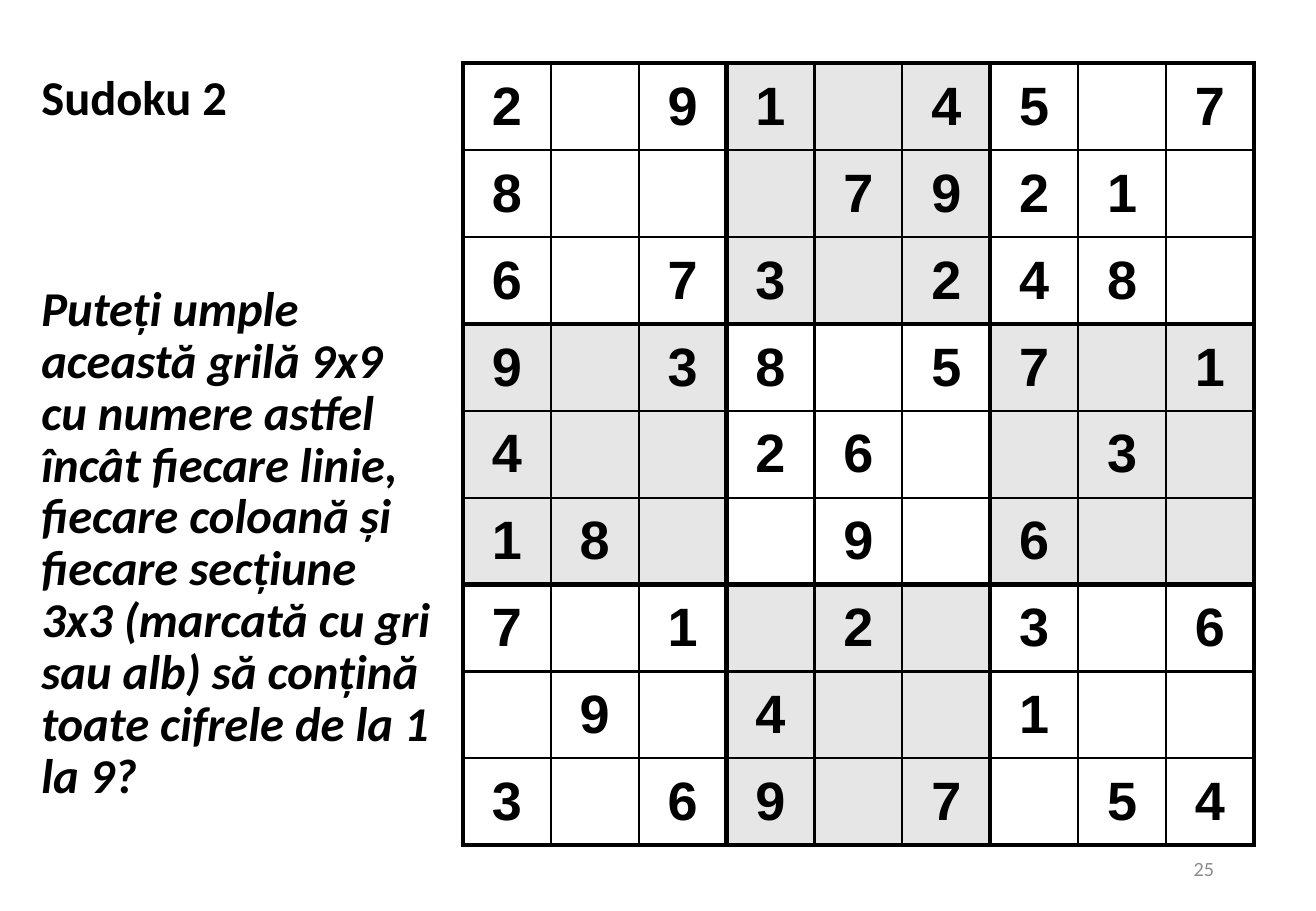
import pptx
import pptx.util
import pptx.dml.color
import pptx.enum.text
import pptx.oxml.ns
from lxml import etree

Inches, Pt = pptx.util.Inches, pptx.util.Pt
RGBColor = pptx.dml.color.RGBColor
PP_ALIGN = pptx.enum.text.PP_ALIGN
MSO_ANCHOR = pptx.enum.text.MSO_ANCHOR

BLACK = RGBColor(0x00, 0x00, 0x00)
WHITE = RGBColor(0xFF, 0xFF, 0xFF)
GREY = RGBColor(0xE7, 0xE6, 0xE6)
NUMBER_GREY = RGBColor(0x8C, 0x8C, 0x8C)

SLIDE_W, SLIDE_H = Inches(10.83), Inches(7.5)
BLOCK = 3
THICK, THIN = Pt(3), Pt(1.5)

QUESTION = ("Puteți umple această grilă 9x9 cu numere astfel încât fiecare linie, "
            "fiecare coloană și fiecare secțiune 3x3 (marcată cu gri sau alb) "
            "să conțină toate cifrele de la 1 la 9?")

# One string per row, a dot for an empty cell
PUZZLE = [
    "2.91.45.7",
    "8...7921.",
    "6.73.248.",
    "9.38.57.1",
    "4..26..3.",
    "18..9.6..",
    "7.1.2.3.6",
    ".9.4..1..",
    "3.69.7.54",
]


def add_run(p, text, size, font, color=BLACK, bold=False, italic=False):
    r = p.add_run()
    r.text = text
    r.font.size, r.font.name = Pt(size), font
    r.font.bold, r.font.italic = bold, italic
    r.font.color.rgb = color


def set_border(cell, side, width):
    tcPr = cell._tc.get_or_add_tcPr()
    ln = etree.SubElement(tcPr, pptx.oxml.ns.qn("a:ln" + side), w=str(int(width)))
    fill = etree.SubElement(ln, pptx.oxml.ns.qn("a:solidFill"))
    etree.SubElement(fill, pptx.oxml.ns.qn("a:srgbClr"), val=str(BLACK))


def format_title(s):
    sp = s.shapes.title
    sp.left, sp.top, sp.width, sp.height = Inches(0.24), Inches(0.48), Inches(3.44), Inches(6.27)
    tf = sp.text_frame
    tf.word_wrap = True
    tf.auto_size = pptx.enum.text.MSO_AUTO_SIZE.NONE
    tf.vertical_anchor = MSO_ANCHOR.MIDDLE
    tf.margin_left = tf.margin_right = Inches(0.1)
    tf.margin_top = tf.margin_bottom = Inches(0.05)
    heading, question = tf.paragraphs[0], tf.add_paragraph()
    for p in (heading, question):
        p.alignment = PP_ALIGN.LEFT
        p.line_spacing = 0.89
        p.space_before = Pt(0)
    question.space_before = Pt(94)
    add_run(heading, "Sudoku 2", 28.8, "Calibri", bold=True)
    add_run(question, QUESTION, 28.8, "Calibri", bold=True, italic=True)


def format_cell(cell, row, col, digit):
    # Thick lines run around each block of three by three
    edges = {"L": col % BLOCK == 0, "R": col % BLOCK == BLOCK - 1,
             "T": row % BLOCK == 0, "B": row % BLOCK == BLOCK - 1}
    for side, on_block_edge in edges.items():
        set_border(cell, side, THICK if on_block_edge else THIN)
    # Blocks alternate like a chessboard
    cell.fill.solid()
    cell.fill.fore_color.rgb = GREY if (row // BLOCK + col // BLOCK) % 2 else WHITE
    cell.vertical_anchor = MSO_ANCHOR.MIDDLE
    cell.margin_left = cell.margin_right = Inches(0.08)
    cell.margin_top = cell.margin_bottom = Inches(0.05)
    if digit != ".":
        p = cell.text_frame.paragraphs[0]
        p.alignment = PP_ALIGN.CENTER
        add_run(p, digit, 32, "Arial", bold=True)


def add_sudoku(s, puzzle):
    n = len(puzzle)
    frame = s.shapes.add_table(n, n, Inches(3.81), Inches(0.52), Inches(6.51), Inches(6.44))
    table = frame.table
    table.first_row = table.horz_banding = False
    for row, digits in enumerate(puzzle):
        for col, digit in enumerate(digits):
            format_cell(table.cell(row, col), row, col, digit)


def add_page_number(s, number):
    sp = s.shapes.add_textbox(Inches(7.65), Inches(6.95), Inches(2.44), Inches(0.4))
    tf = sp.text_frame
    tf.word_wrap = True
    tf.vertical_anchor = MSO_ANCHOR.MIDDLE
    p = tf.paragraphs[0]
    p.alignment = PP_ALIGN.RIGHT
    add_run(p, number, 12, "Calibri", NUMBER_GREY)


def main():
    prs = pptx.Presentation()
    prs.slide_width, prs.slide_height = SLIDE_W, SLIDE_H
    s = prs.slides.add_slide(prs.slide_layouts[5])
    format_title(s)
    add_sudoku(s, PUZZLE)
    add_page_number(s, "25")
    prs.save("out.pptx")


if __name__ == "__main__":
    main()
